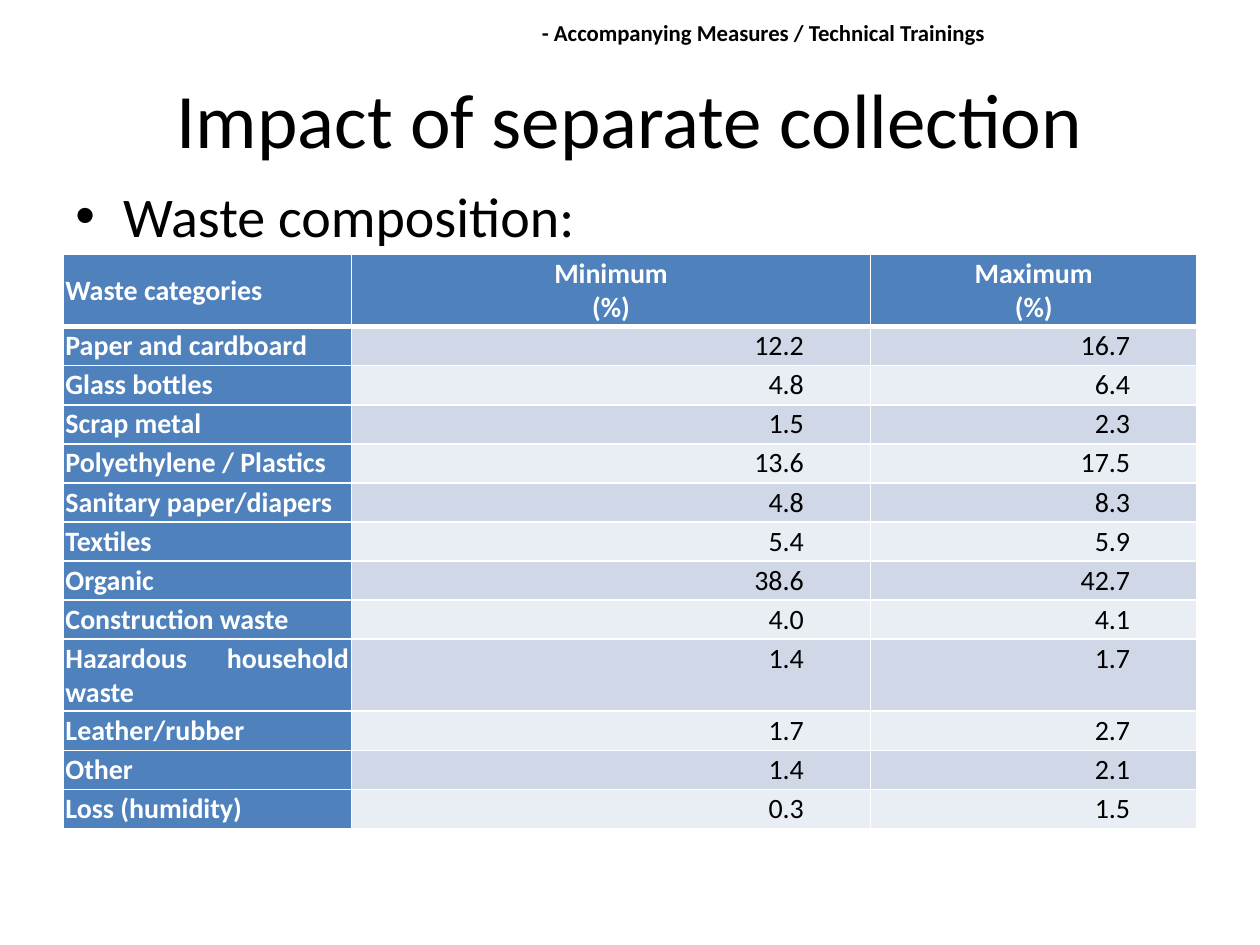
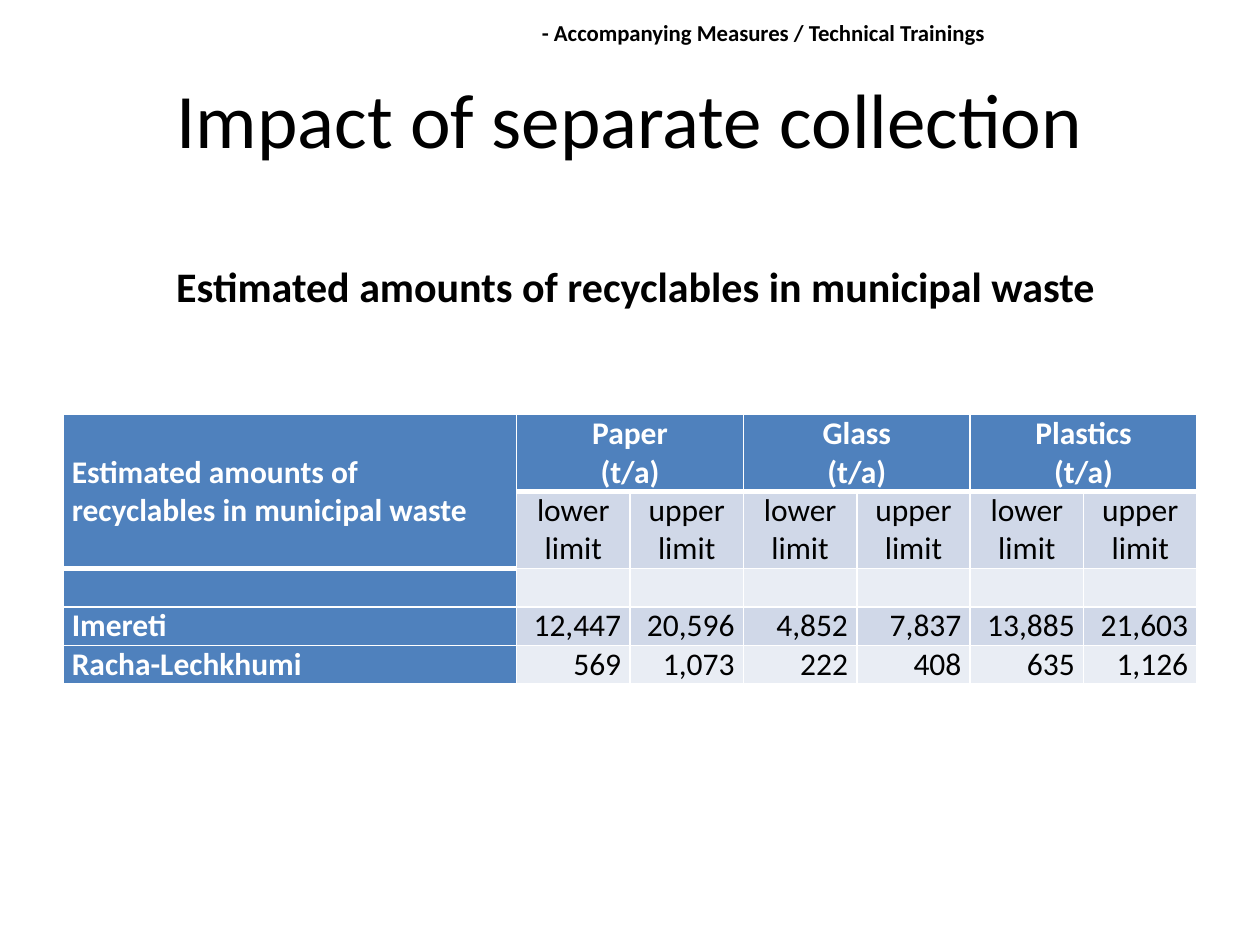
from dataclasses import dataclass

from lxml import etree
from pptx import Presentation
from pptx.dml.color import RGBColor
from pptx.enum.shapes import MSO_SHAPE
from pptx.enum.text import MSO_ANCHOR, MSO_AUTO_SIZE, PP_ALIGN
from pptx.oxml.ns import qn
from pptx.util import Inches, Pt

LEFT, CENTER, RIGHT, JUSTIFY = PP_ALIGN.LEFT, PP_ALIGN.CENTER, PP_ALIGN.RIGHT, PP_ALIGN.JUSTIFY
TOP, MIDDLE = MSO_ANCHOR.TOP, MSO_ANCHOR.MIDDLE
NO_AUTOFIT = MSO_AUTO_SIZE.NONE
RECTANGLE = MSO_SHAPE.RECTANGLE
TITLE_ONLY = 5


@dataclass(frozen=True)
class Theme:
    """Colours, font and type sizes of the deck."""
    font: str = "Calibri"
    ink: str = "000000"
    paper: str = "FFFFFF"
    accent: str = "4F81BD"
    bands: tuple = ("E9EDF4", "D0D8E8")
    band_size: int = 13
    title_size: int = 44
    bullet_size: int = 32
    caption_size: int = 24
    composition_size: int = 16
    amounts_size: int = 18
    thin_rule: int = 1
    heavy_rule: int = 3


THEME = Theme()
COURSE = " - Accompanying Measures / Technical Trainings"
TITLE = "Impact of separate collection"
COMPOSITION = [
    ("Waste categories", "Minimum\n(%)", "Maximum\n(%)"),
    ("Paper and cardboard", "12.2", "16.7"),
    ("Glass bottles", "4.8", "6.4"),
    ("Scrap metal", "1.5", "2.3"),
    ("Polyethylene / Plastics", "13.6", "17.5"),
    ("Sanitary paper/diapers", "4.8", "8.3"),
    ("Textiles", "5.4", "5.9"),
    ("Organic", "38.6", "42.7"),
    ("Construction waste", "4.0", "4.1"),
    ("Hazardous household waste", "1.4", "1.7"),
    ("Leather/rubber", "1.7", "2.7"),
    ("Other", "1.4", "2.1"),
    ("Loss (humidity)", "0.3", "1.5"),
]
RECYCLABLES = "Estimated amounts of recyclables in municipal waste"
AMOUNTS = [
    (RECYCLABLES, "Paper\n(t/a)", "", "Glass\n(t/a)", "", "Plastics\n(t/a)", ""),
    ("",) + ("lower limit", "upper limit") * 3,
    ("",) * 7,
    ("Imereti", "12,447", "20,596", "4,852", "7,837", "13,885", "21,603"),
    ("Racha-Lechkhumi", "569", "1,073", "222", "408", "635", "1,126"),
]


def write(frame, text, size, color=THEME.ink, bold=False, align=LEFT, bullet_indent=None):
    """Write each line of text as a formatted paragraph."""
    for number, line in enumerate(text.split("\n")):
        paragraph = frame.paragraphs[0] if number == 0 else frame.add_paragraph()
        paragraph.alignment = align
        if bullet_indent:
            properties = paragraph._p.get_or_add_pPr()
            properties.set("marL", str(bullet_indent))
            properties.set("indent", str(-bullet_indent))
            etree.SubElement(properties, qn("a:buFont")).set("typeface", "Arial")
            etree.SubElement(properties, qn("a:buChar")).set("char", "•")
        if line:
            run = paragraph.add_run()
            run.text = line
            run.font.name, run.font.size, run.font.bold = THEME.font, Pt(size), bold
            run.font.color.rgb = RGBColor.from_string(color)


def inches(*lengths):
    """Convert numbers to lengths."""
    return [Inches(length) for length in lengths]


def add_text(slide, box, text, **text_format):
    """Add a wrapping text box."""
    frame = slide.shapes.add_textbox(*inches(*box)).text_frame
    frame.word_wrap = True
    write(frame, text, **text_format)


def add_course_band(slide, box):
    """Add the course name in its white band."""
    band = slide.shapes.add_shape(RECTANGLE, *inches(*box))
    band.shadow.inherit = False
    band.fill.solid()
    band.fill.fore_color.rgb = RGBColor.from_string(THEME.paper)
    band.line.fill.background()
    frame = band.text_frame
    frame.word_wrap, frame.vertical_anchor = True, TOP
    frame.margin_left = frame.margin_top = frame.margin_right = frame.margin_bottom = Inches(0.04)
    write(frame, COURSE, size=THEME.band_size, bold=True)


def set_title(slide, box):
    """Place and format the title placeholder."""
    title = slide.shapes.title
    title.left, title.top, title.width, title.height = inches(*box)
    frame = title.text_frame
    frame.auto_size, frame.vertical_anchor = NO_AUTOFIT, TOP
    write(frame, TITLE, size=THEME.title_size, align=CENTER)


def add_impact_slide(deck):
    """Add a slide with the shared band and title."""
    slide = deck.slides.add_slide(deck.slide_layouts[TITLE_ONLY])
    add_course_band(slide, (4.22, 0.11, 3.98, 0.31))
    set_title(slide, (0.5, 0.52, 9, 0.71))
    return slide


def set_borders(cell, top, bottom):
    """Draw white cell borders with the given top and bottom widths."""
    properties = cell._tc.get_or_add_tcPr()
    widths = {"lnL": THEME.thin_rule, "lnR": THEME.thin_rule, "lnT": top, "lnB": bottom}
    for position, (side, width) in enumerate(widths.items()):
        line = etree.Element(qn(f"a:{side}"), w=str(Pt(width)))
        fill = etree.SubElement(line, qn("a:solidFill"))
        etree.SubElement(fill, qn("a:srgbClr")).set("val", THEME.paper)
        properties.insert(position, line)


def add_data_table(slide, box, rows, widths, heights, size, insets, value_inset, label_rows=1):
    """Add a table with a header row, a label column and banded values."""
    table = slide.shapes.add_table(len(rows), len(widths), *inches(*box)).table
    table.first_col = True
    for column, width in zip(table.columns, widths):
        column.width = Inches(width)
    for row, height in zip(table.rows, heights):
        row.height = Inches(height)

    def rule_below(r, c):
        """Return the rule width under a cell."""
        last_header = label_rows - 1 if c == 0 else 0
        return THEME.heavy_rule if 0 <= r <= last_header else THEME.thin_rule

    side, edge = inches(*insets)
    for r, values in enumerate(rows):
        for c, value in enumerate(values):
            cell = table.cell(r, c)
            heading, is_value = r == 0 or c == 0, r >= label_rows and c > 0
            cell.margin_left = cell.margin_right = side
            cell.margin_top = cell.margin_bottom = edge
            if is_value:
                cell.margin_right = Inches(value_inset)
            cell.vertical_anchor = MIDDLE if r == 0 else TOP
            cell.fill.solid()
            cell.fill.fore_color.rgb = RGBColor.from_string(
                THEME.accent if heading else THEME.bands[r % 2])
            set_borders(cell, rule_below(r - 1, c), rule_below(r, c))
            if c == 0:
                align = LEFT if r == 0 else JUSTIFY
            else:
                align = RIGHT if is_value else CENTER
            write(cell.text_frame, value, size=size, bold=heading, align=align,
                  color=THEME.paper if heading else THEME.ink)
    return table


def add_composition_slide(deck):
    """Add the waste composition slide."""
    slide = add_impact_slide(deck)
    add_text(slide, (0.5, 1.39, 9, 4.96), "Waste composition:",
             size=THEME.bullet_size, bullet_indent=Inches(0.38))
    add_data_table(slide, (0.5, 2.02, 9, 4.59), COMPOSITION, widths=(2.29, 4.12, 2.59),
                   heights=[0.57] + [0.31] * 12, size=THEME.composition_size,
                   insets=(0.02, 0.02), value_inset=0.53)


def add_amounts_slide(deck):
    """Add the slide on recyclable amounts by region."""
    slide = add_impact_slide(deck)
    table = add_data_table(slide, (0.5, 3.29, 9, 2.1), AMOUNTS, widths=[3.6] + [0.9] * 6,
                           heights=[0.6] * 2 + [0.3] * 3, size=THEME.amounts_size,
                           insets=(0.07, 0), value_inset=0.07, label_rows=2)
    table.cell(0, 0).merge(table.cell(1, 0))
    for first in range(1, 7, 2):
        table.cell(0, first).merge(table.cell(0, first + 1))
    add_text(slide, (1.3, 2.02, 7.72, 0.5), RECYCLABLES, size=THEME.caption_size, bold=True)


def main():
    """Build and save the deck."""
    deck = Presentation()
    deck.slide_width, deck.slide_height = inches(10, 7.5)
    add_composition_slide(deck)
    add_amounts_slide(deck)
    deck.save("out.pptx")


if __name__ == "__main__":
    main()
